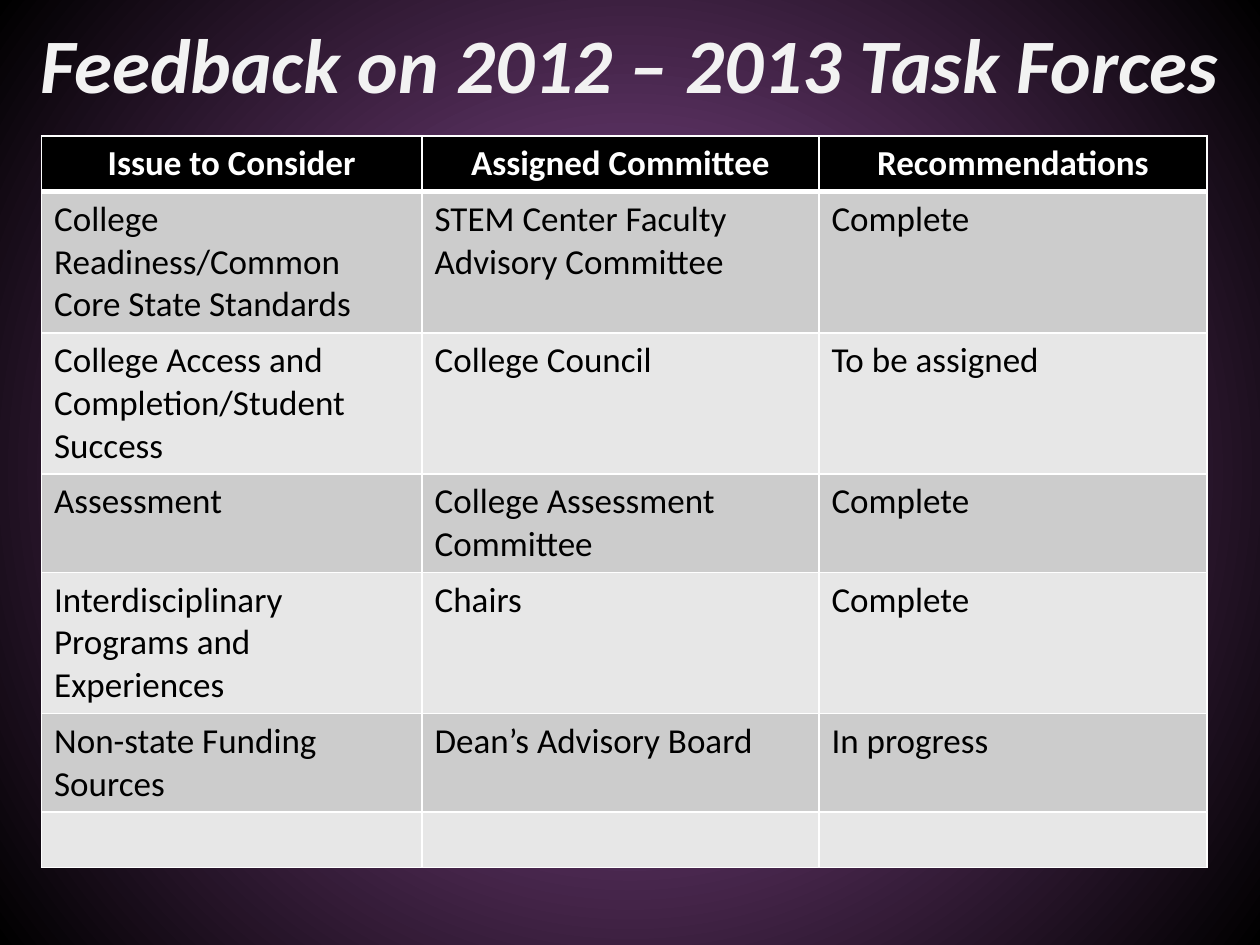
from typing import NamedTuple

from lxml import etree
from pptx import Presentation
from pptx.dml.color import RGBColor
from pptx.enum.text import MSO_ANCHOR, PP_ALIGN
from pptx.oxml.ns import qn
from pptx.util import Inches, Pt

CENTER, LEFT = PP_ALIGN.CENTER, PP_ALIGN.LEFT
MIDDLE = MSO_ANCHOR.MIDDLE

PURPLE = RGBColor(0x96, 0x51, 0xA1)
BLACK = RGBColor(0, 0, 0)
WHITE = RGBColor(255, 255, 255)
PALE = RGBColor(0xF2, 0xF2, 0xF2)
DARK_BAND = RGBColor(0xCC, 0xCC, 0xCC)
LIGHT_BAND = RGBColor(0xE7, 0xE7, 0xE7)
FONT = "Calibri"


class Row(NamedTuple):
    issue: str
    group: str
    status: str
    lines: int


HEAD = Row("Issue to Consider", "Assigned Committee", "Recommendations", 1)
ROWS = [
    Row("College Readiness/Common Core State Standards",
        "STEM Center Faculty Advisory Committee", "Complete", 3),
    Row("College Access and Completion/Student Success",
        "College Council", "To be assigned", 3),
    Row("Assessment", "College Assessment Committee", "Complete", 2),
    Row("Interdisciplinary Programs and Experiences", "Chairs", "Complete", 3),
    Row("Non-state Funding Sources", "Dean’s Advisory Board", "In progress", 2),
    Row("", "", "", 1),
]
WIDTHS = [3.02, 3.15, 3.08]


def style(para, size: float, color: RGBColor, bold: bool, align) -> None:
    para.alignment = align
    for run in para.runs:
        font = run.font
        font.name, font.size, font.bold = FONT, Pt(size), bold
        font.color.rgb = color


def paint_back(slide) -> None:
    """Radial gradient from the middle of the slide."""
    fill = slide.background.fill
    fill.gradient()
    for stop, color in zip(fill.gradient_stops, (PURPLE, BLACK)):
        stop.color.rgb = color
    grad = slide.element.find(".//" + qn("a:gradFill"))
    grad.remove(grad.find(qn("a:lin")))
    ring = etree.SubElement(grad, qn("a:path"), path="circle")
    etree.SubElement(ring, qn("a:fillToRect"),
                     {side: "50000" for side in "ltrb"})


def add_edge(cell, side: str, width: float) -> None:
    props = cell._tc.get_or_add_tcPr()
    line = etree.SubElement(props, qn("a:ln" + side), w=str(Pt(width)))
    solid = etree.SubElement(line, qn("a:solidFill"))
    etree.SubElement(solid, qn("a:srgbClr"), val=str(WHITE))


def fill_cell(cell, text: str, row: int) -> None:
    head = row == 0
    # Edges come before the fill in the cell properties
    thick = {"T": 3 if row == 1 else 1, "B": 3 if head else 1}
    for side in "LRTB":
        add_edge(cell, side, thick.get(side, 1))
    cell.fill.solid()
    cell.fill.fore_color.rgb = (
        BLACK if head else DARK_BAND if row % 2 else LIGHT_BAND)
    cell.text = text
    style(cell.text_frame.paragraphs[0], 20, WHITE if head else BLACK,
          head, CENTER if head else LEFT)


def add_grid(slide, rows: list[Row]) -> None:
    frame = slide.shapes.add_table(
        len(rows), len(WIDTHS), Inches(0.33), Inches(1.08),
        Inches(sum(WIDTHS)), Inches(5.8))
    table = frame.table
    for col, width in zip(table.columns, WIDTHS):
        col.width = Inches(width)
    for i, row in enumerate(rows):
        table.rows[i].height = Inches(0.1 + 0.34 * row.lines)
        for j, text in enumerate((row.issue, row.group, row.status)):
            fill_cell(table.cell(i, j), text, i)


def main() -> None:
    deck = Presentation()
    deck.slide_width, deck.slide_height = Inches(10), Inches(7.5)
    slide = deck.slides.add_slide(deck.slide_layouts[5])
    paint_back(slide)

    # Title
    title = slide.shapes.title
    title.left, title.top = Inches(0), Inches(0)
    title.width, title.height = Inches(10), Inches(1)
    frame = title.text_frame
    frame.text = "Feedback on 2012 – 2013 Task Forces"
    frame.vertical_anchor = MIDDLE
    frame.word_wrap = True
    para = frame.paragraphs[0]
    style(para, 44, PALE, True, CENTER)
    para.runs[0].font.italic = True

    # Task force table
    add_grid(slide, [HEAD, *ROWS])
    deck.save("out.pptx")


if __name__ == "__main__":
    main()
